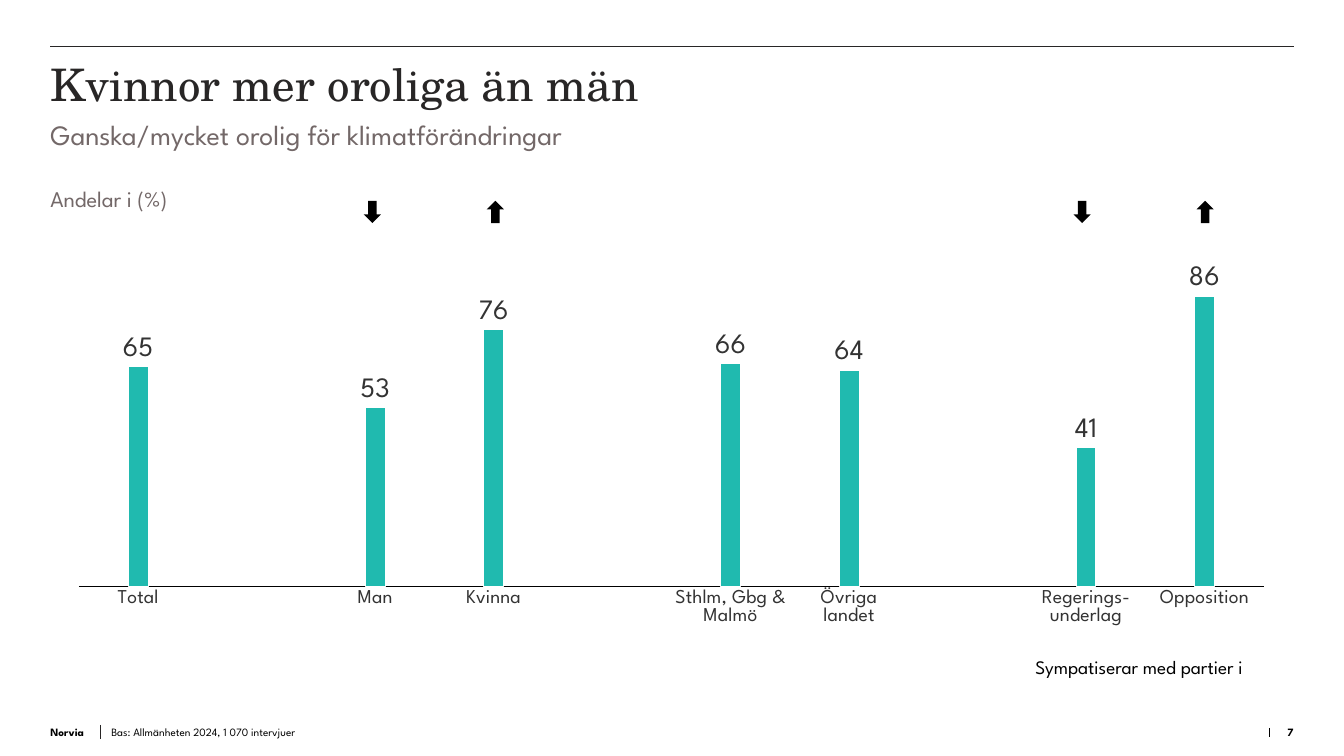
from lxml import etree
from pptx import Presentation, util as u
from pptx.chart import data as chart_data
from pptx.dml import color
from pptx.enum import chart as charts, shapes, text
from pptx.oxml import ns, parse_xml

COLUMNS, ROWS = 160, 90
PLOT_AREA = {"x": 0.023, "y": 0.126, "w": 0.953, "h": 0.644}
WORRIED = [
    ("Total", 65), ("", None),
    ("Man", 53), ("Kvinna", 76), ("", None),
    ("Sthlm, Gbg & Malmö", 66), ("Övriga\nlandet", 64), ("", None),
    ("Regerings-\nunderlag", 41), ("Opposition", 86),
]


def rgb(value):
    return color.RGBColor.from_string(value)


def write(shape, content, size, fill="000000", font="League Spartan", bold=False,
          align=text.PP_ALIGN.LEFT, anchor=text.MSO_ANCHOR.TOP, inset_top=0):
    frame = shape.text_frame
    frame.word_wrap = True
    frame.auto_size = text.MSO_AUTO_SIZE.NONE
    frame.vertical_anchor = anchor
    frame.margin_left = frame.margin_right = frame.margin_bottom = 0
    frame.margin_top = u.Inches(inset_top)
    paragraph = frame.paragraphs[0]
    paragraph.alignment = align
    paragraph.space_before = u.Pt(0)
    run = paragraph.add_run()
    run.text = content
    run.font.name = font
    run.font.size = u.Pt(size)
    run.font.bold = bold
    run.font.color.rgb = rgb(fill)
    return paragraph


class SlideBuilder:
    ink, muted, teal, label = "282626", "736868", "20BAAF", "333333"
    serif, sans = "TeX Gyre Schola", "League Spartan"

    def __init__(self, presentation):
        self.column = presentation.slide_width / COLUMNS
        self.row = presentation.slide_height / ROWS
        self.slide = presentation.slides.add_slide(presentation.slide_layouts[1])

    def box(self, left, top, width, height):
        return (round(left * self.column), round(top * self.row),
                round(width * self.column), round(height * self.row))

    def place(self, shape, *area):
        shape.left, shape.top, shape.width, shape.height = self.box(*area)
        return shape

    def title(self, content, *area):
        shape = self.place(self.slide.shapes.title, *area)
        write(shape, content, 32, fill=self.ink, font=self.serif, inset_top=0.1)

    def subtitle(self, content, *area):
        shape = self.place(self.slide.placeholders[1], *area)
        paragraph = write(shape, content, 20, fill=self.muted)
        properties = paragraph._p.get_or_add_pPr()
        properties.set("marL", "0")
        properties.set("indent", "0")
        etree.SubElement(properties, ns.qn("a:buNone"))

    def textbox(self, content, area, size, **style):
        return write(self.slide.shapes.add_textbox(*self.box(*area)), content, size, **style)

    def footer(self, content, left, width, **style):
        self.textbox(content, (left, 85.9, width, 2.04), 8,
                     anchor=text.MSO_ANCHOR.BOTTOM, **style)

    def line(self, x1, y1, x2, y2, stroke):
        connector = self.slide.shapes.add_connector(
            shapes.MSO_CONNECTOR.STRAIGHT, *self.box(x1, y1, x2, y2))
        connector.line.color.rgb = rgb(stroke)
        connector.line.width = u.Pt(0.5)
        etree.SubElement(connector._element.spPr, ns.qn("a:effectLst"))

    def arrow(self, left, top, rotation):
        shape = self.slide.shapes.add_shape(
            shapes.MSO_SHAPE.UP_ARROW, *self.box(left, top, 2.04, 2.65))
        shape.shadow.inherit = False
        shape.rotation = rotation
        shape.fill.solid()
        shape.fill.fore_color.rgb = rgb("000000")
        shape.line.fill.background()

    def column_chart(self, rows, *area):
        source = chart_data.CategoryChartData(number_format="0")
        source.categories = [name for name, _ in rows]
        source.add_series("Series 1", [value for _, value in rows])
        chart = self.slide.shapes.add_chart(
            charts.XL_CHART_TYPE.COLUMN_CLUSTERED, *self.box(*area), source).chart
        chart.has_legend = chart.has_title = False
        chart.font.name = self.sans
        chart.font.size = u.Pt(14)
        chart.font.color.rgb = rgb(self.label)

        chart.value_axis.visible = False
        chart.value_axis.has_major_gridlines = False
        chart.value_axis.minimum_scale = 0
        chart.value_axis.maximum_scale = 100
        axis = chart.category_axis
        axis.major_tick_mark = axis.minor_tick_mark = charts.XL_TICK_MARK.NONE
        axis.tick_labels.font.size = u.Pt(14)
        axis.format.line.color.rgb = rgb("000000")
        axis.format.line.width = u.Pt(0.75)

        plot = chart.plots[0]
        plot.gap_width, plot.overlap = 500, -100
        plot.vary_by_categories = False
        series = plot.series[0]
        series.format.fill.solid()
        series.format.fill.fore_color.rgb = rgb(self.teal)
        series.format.line.color.rgb = rgb("FFFFFF")
        series.format.line.width = u.Pt(0.5)
        labels = series.data_labels
        labels.show_value = True
        labels.position = charts.XL_LABEL_POSITION.OUTSIDE_END
        labels.font.name = self.sans
        labels.font.size = u.Pt(20)
        labels.font.color.rgb = rgb(self.label)
        self.format_plot_area(chart)

    def format_plot_area(self, chart):
        area = chart._chartSpace.chart.plotArea
        for layout in area.findall(ns.qn("c:layout")):
            area.remove(layout)
        modes = "".join(f'<c:{side}Mode val="edge"/>' for side in "xy")
        sizes = "".join(f'<c:{side} val="{share}"/>' for side, share in PLOT_AREA.items())
        area.insert(0, parse_xml(
            f'<c:layout {ns.nsdecls("c")}><c:manualLayout><c:layoutTarget val="inner"/>'
            f'{modes}{sizes}</c:manualLayout></c:layout>'))
        area.append(parse_xml(
            f'<c:spPr {ns.nsdecls("c", "a")}><a:solidFill><a:srgbClr val="FFFFFF"/>'
            '</a:solidFill></c:spPr>'))


def main():
    presentation = Presentation()
    presentation.slide_width = u.Inches(13.33)
    presentation.slide_height = u.Inches(7.5)
    builder = SlideBuilder(presentation)

    builder.line(6, 5.5, 154, 5.5, builder.ink)
    builder.line(12, 86.3, 12, 88, builder.ink)
    builder.line(151.1, 86.65, 151.1, 87.7, "000000")
    builder.footer("Norvia", 6, 6, bold=True)
    builder.footer("Bas: Allmänheten 2024, 1 070 intervjuer", 13.25, 93.6)
    builder.footer("7", 151.1, 2.9, bold=True, align=text.PP_ALIGN.RIGHT)

    builder.title("Kvinnor mer oroliga än män", 6, 5.5, 148, 8.5)
    builder.subtitle("Ganska/mycket orolig för klimatförändringar", 6, 14, 101, 5.5)
    builder.column_chart(WORRIED, 6, 21.75, 148, 62.4)
    builder.textbox("Andelar i (%)", (6, 22, 101, 5.5), 16, fill=builder.muted)
    note = builder.textbox("Sympatiserar med partier i", (123.25, 78, 31.2, 4), 13.6)
    note.space_after = u.Pt(6)

    for pair_left in (43.3, 127.8):
        for step, rotation in enumerate((180, 0)):
            builder.arrow(pair_left + step * 14.65, 23.9, rotation)

    presentation.save("out.pptx")


if __name__ == "__main__":
    main()
